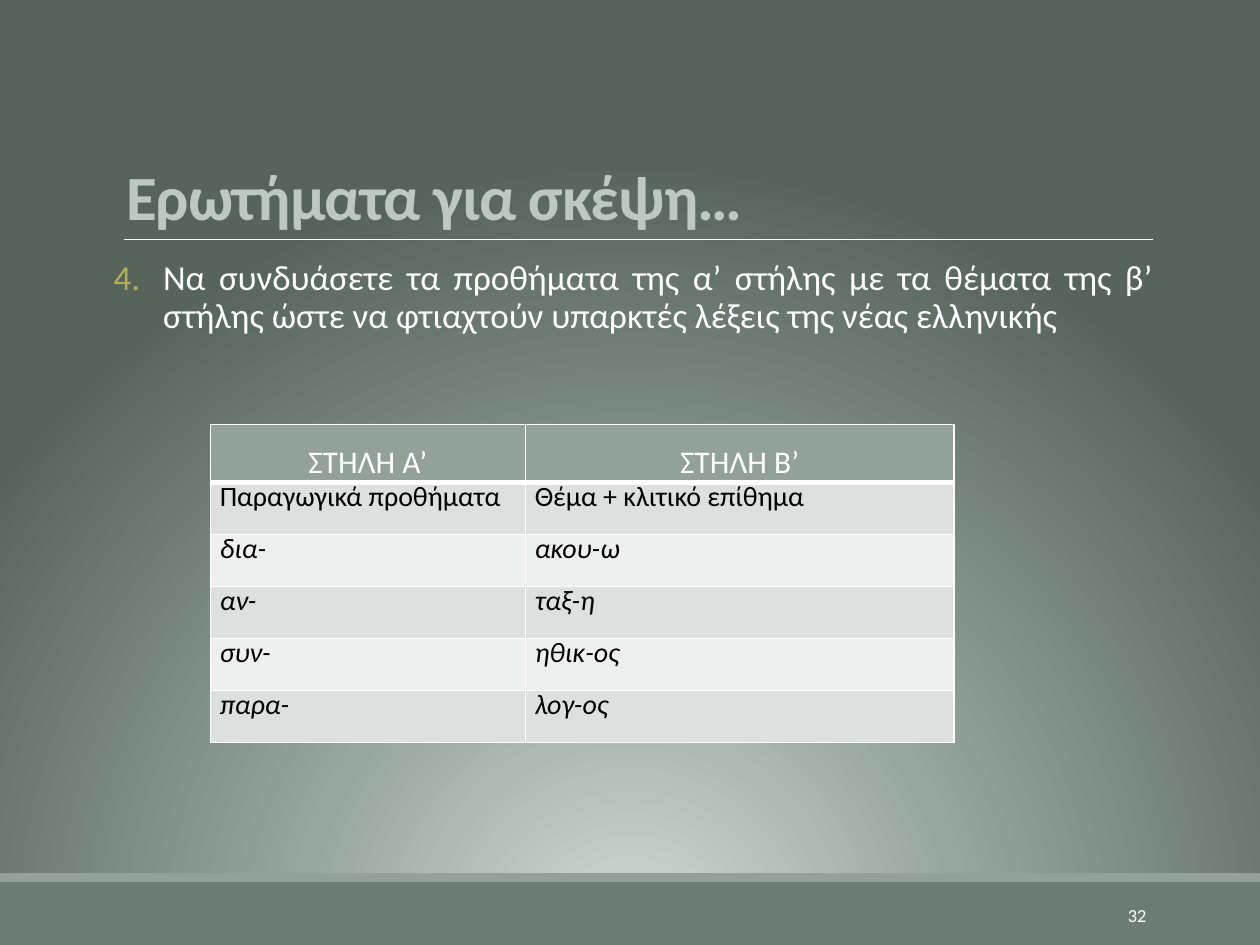
from dataclasses import dataclass

from lxml import etree
from pptx import Presentation
from pptx.dml.color import RGBColor
from pptx.enum.shapes import MSO_CONNECTOR, MSO_SHAPE
from pptx.enum.text import MSO_ANCHOR, MSO_AUTO_SIZE, PP_ALIGN
from pptx.oxml import parse_xml
from pptx.oxml.ns import nsdecls, qn
from pptx.util import Cm, Pt

RECTANGLE = MSO_SHAPE.RECTANGLE
STRAIGHT = MSO_CONNECTOR.STRAIGHT
TOP, MIDDLE, BOTTOM = MSO_ANCHOR.TOP, MSO_ANCHOR.MIDDLE, MSO_ANCHOR.BOTTOM
LEFT, CENTER, RIGHT, JUSTIFY = PP_ALIGN.LEFT, PP_ALIGN.CENTER, PP_ALIGN.RIGHT, PP_ALIGN.JUSTIFY
NO_AUTOFIT = MSO_AUTO_SIZE.NONE


@dataclass(frozen=True)
class Theme:
    font: str = "Calibri"
    white: str = "FFFFFF"
    black: str = "000000"
    title: str = "BEC7C2"
    number: str = "B5AE53"
    footer: str = "6B7D72"
    accent: str = "93A299"
    bands: tuple = ("DCE0DE", "EEF0EF")
    glow: tuple = ((0, "D4DAD6"), (42, "98A79E"), (100, "56645B"))
    title_size: float = 36
    body_size: float = 20
    header_size: float = 18
    cell_size: float = 16
    page_size: float = 10.5


THEME = Theme()

QUESTION = ("Να συνδυάσετε τα προθήματα της α’ στήλης με τα θέματα της β’ στήλης "
            "ώστε να φτιαχτούν υπαρκτές λέξεις της νέας ελληνικής")
ROWS = (
    ("ΣΤΗΛΗ Α’", "ΣΤΗΛΗ Β’"),
    ("Παραγωγικά προθήματα", "Θέμα + κλιτικό επίθημα"),
    ("δια-", "ακου-ω"),
    ("αν-", "ταξ-η"),
    ("συν-", "ηθικ-ος"),
    ("παρα-", "λογ-ος"),
)


def set_background(slide):
    """Radial gradient whose centre lies below the slide."""
    stops = "".join(f'<a:gs pos="{position * 1000}"><a:srgbClr val="{color}"/></a:gs>'
                    for position, color in THEME.glow)
    slide.background.fill.solid()
    solid = next(slide.element.iter(qn("a:solidFill")))
    solid.getparent().replace(solid, parse_xml(
        f'<a:gradFill {nsdecls("a")} rotWithShape="1"><a:gsLst>{stops}</a:gsLst>'
        '<a:path path="circle"><a:fillToRect l="50000" t="130000" r="50000" b="-30000"/>'
        '</a:path></a:gradFill>'))


def add_band(slide, top, height, color):
    band = slide.shapes.add_shape(RECTANGLE, 0, top, Cm(25.4), height)
    band.shadow.inherit = False
    band.fill.solid()
    band.fill.fore_color.rgb = RGBColor.from_string(color)
    band.line.fill.background()


def add_rule(slide, left, right, y):
    rule = slide.shapes.add_connector(STRAIGHT, left, y, right, y)
    rule.line.color.rgb = RGBColor.from_string(THEME.white)
    rule.line.width = Pt(0.5)
    etree.SubElement(rule._element.spPr, qn("a:effectLst"))


def write(frame, text, size, color, align, spacing=1.0, bold=False, italic=False):
    """Put one formatted run in the first paragraph of a text frame."""
    paragraph = frame.paragraphs[0]
    paragraph.alignment = align
    paragraph.line_spacing = spacing
    run = paragraph.add_run()
    run.text = text
    run.font.name = THEME.font
    run.font.size = Pt(size)
    run.font.bold = bold
    run.font.italic = italic
    run.font.color.rgb = RGBColor.from_string(color)
    return paragraph


def set_frame(shape, anchor):
    frame = shape.text_frame
    frame.word_wrap = True
    frame.auto_size = NO_AUTOFIT
    frame.vertical_anchor = anchor
    return frame


def set_title(slide, text):
    title = slide.shapes.title
    title.left, title.top, title.width, title.height = Cm(2.29), Cm(0.79), Cm(20.96), Cm(4.04)
    paragraph = write(set_frame(title, BOTTOM), text, THEME.title_size, THEME.title,
                      LEFT, 0.85, bold=True)
    paragraph.runs[0].font._element.set("spc", "-50")


def add_question(slide, text, number):
    box = slide.shapes.add_textbox(Cm(2.29), Cm(5.13), Cm(20.96), Cm(11.18))
    frame = set_frame(box, TOP)
    frame.margin_left = frame.margin_right = 0
    paragraph = write(frame, text, THEME.body_size, THEME.white, JUSTIFY, 0.9)
    paragraph.space_before, paragraph.space_after = Pt(12), Pt(2)
    # Hanging number in its own colour
    properties = paragraph._p.get_or_add_pPr()
    properties.set("marL", str(Cm(1)))
    properties.set("indent", str(-Cm(1)))
    color = etree.SubElement(properties, qn("a:buClr"))
    etree.SubElement(color, qn("a:srgbClr"), val=THEME.number)
    etree.SubElement(properties, qn("a:buFont"), typeface=THEME.font)
    etree.SubElement(properties, qn("a:buAutoNum"), type="arabicPeriod", startAt=str(number))


def add_page_number(slide, text):
    box = slide.shapes.add_textbox(Cm(20.62), Cm(17.93), Cm(2.74), Cm(1.02))
    write(set_frame(box, MIDDLE), text, THEME.page_size, THEME.white, RIGHT)


def set_borders(cell, bottom, top):
    properties = cell._tc.get_or_add_tcPr()
    for side, points in (("L", 1), ("R", 1), ("T", top), ("B", bottom)):
        line = etree.SubElement(properties, qn(f"a:ln{side}"), w=str(Pt(points)))
        fill = etree.SubElement(line, qn("a:solidFill"))
        etree.SubElement(fill, qn("a:srgbClr"), val=THEME.white)


def add_word_table(slide, rows):
    table = slide.shapes.add_table(len(rows), 2, Cm(4.24), Cm(8.56), Cm(14.99), Cm(6.3)).table
    table.horz_banding = False
    table.columns[0].width, table.columns[1].width = Cm(6.35), Cm(8.64)
    for row_index, texts in enumerate(rows):
        table.rows[row_index].height = Cm(1.05)
        header = row_index == 0
        for column_index, text in enumerate(texts):
            cell = table.cell(row_index, column_index)
            cell.margin_left = cell.margin_right = Cm(0.19)
            cell.margin_top = cell.margin_bottom = 0
            set_borders(cell, bottom=3 if header else 1, top=3 if row_index == 1 else 1)
            cell.fill.solid()
            cell.fill.fore_color.rgb = RGBColor.from_string(
                THEME.accent if header else THEME.bands[(row_index - 1) % 2])
            if header:
                write(cell.text_frame, text, THEME.header_size, THEME.white, CENTER, 1.5)
            else:
                write(cell.text_frame, text, THEME.cell_size, THEME.black, JUSTIFY, Pt(18),
                      italic=row_index > 1)


def main():
    presentation = Presentation()
    presentation.slide_width, presentation.slide_height = Cm(25.4), Cm(19.05)
    slide = presentation.slides.add_slide(presentation.slide_layouts[5])

    # Backdrop
    set_background(slide)
    add_band(slide, Cm(17.78), Cm(1.27), THEME.footer)
    add_band(slide, Cm(17.6), Cm(0.18), THEME.accent)
    add_rule(slide, Cm(2.49), Cm(23.24), Cm(4.83))

    # Content
    set_title(slide, "Ερωτήματα για σκέψη…")
    add_page_number(slide, "32")
    add_question(slide, QUESTION, 4)
    add_word_table(slide, ROWS)

    presentation.save("out.pptx")


if __name__ == "__main__":
    main()
